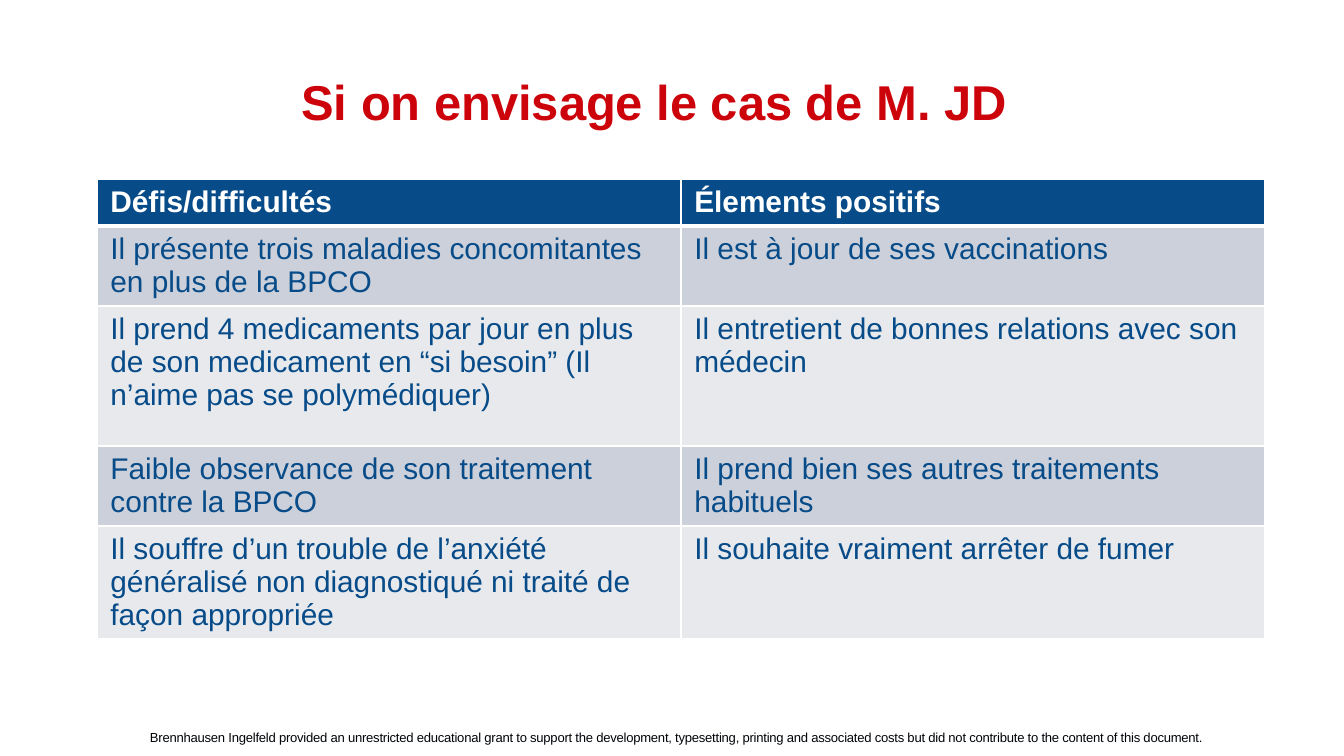
from lxml import etree
from pptx import Presentation
from pptx.dml.color import RGBColor
from pptx.enum.text import MSO_ANCHOR, MSO_AUTO_SIZE, PP_ALIGN
from pptx.oxml.ns import qn
from pptx.util import Emu, Pt

WHITE = RGBColor(0xFF, 0xFF, 0xFF)
RED = RGBColor(0xCC, 0x03, 0x0B)
BLUE = RGBColor(0x07, 0x4B, 0x88)
INK = RGBColor(0x00, 0x05, 0x0A)
BAND_DARK = RGBColor(0xCC, 0xD0, 0xDA)
BAND_LIGHT = RGBColor(0xE7, 0xE9, 0xED)

ROWS = [
    ("Défis/difficultés", "Élements positifs"),
    ("Il présente trois maladies concomitantes en plus de la BPCO",
     "Il est à jour de ses vaccinations"),
    ("Il prend 4 medicaments par jour en plus de son medicament en “si besoin” "
     "(Il n’aime pas se polymédiquer)",
     "Il entretient de bonnes relations avec son médecin"),
    ("Faible observance de son traitement contre la BPCO",
     "Il prend bien ses autres traitements habituels"),
    ("Il souffre d’un trouble de l’anxiété généralisé non diagnostiqué ni traité "
     "de façon appropriée",
     "Il souhaite vraiment arrêter de fumer"),
]
ROW_HEIGHTS = [47, 80, 140, 79, 113]
COLUMN_WIDTH = 584


def px(count):
    return Emu(round(count * 914400 / 134.4))


def add_borders(cell, **widths):
    """Draw white cell borders, with widths in points keyed by L, R, T and B."""
    properties = cell._tc.get_or_add_tcPr()
    for side, width in widths.items():
        line = etree.SubElement(properties, qn(f"a:ln{side}"), w=str(Pt(width)))
        fill = etree.SubElement(line, qn("a:solidFill"))
        etree.SubElement(fill, qn("a:srgbClr"), val=str(WHITE))


prs = Presentation()
prs.slide_width, prs.slide_height = px(1344), px(756)
slide = prs.slides.add_slide(prs.slide_layouts[5])

# Title
title = slide.shapes.title
title.left, title.top, title.width, title.height = px(288), px(59), px(1056), px(83)
title.text_frame.auto_size = MSO_AUTO_SIZE.NONE
title.text_frame.vertical_anchor = MSO_ANCHOR.MIDDLE
heading = title.text_frame.paragraphs[0]
heading.text = "Si on envisage le cas de M. JD"
heading.alignment = PP_ALIGN.LEFT
heading.font.name, heading.font.size, heading.font.bold = "Arial", Pt(26.2), True
heading.font.color.rgb = RED

# Challenges and strengths
table = slide.shapes.add_table(len(ROWS), 2, px(97), px(179),
                               px(2 * COLUMN_WIDTH), px(sum(ROW_HEIGHTS))).table
for column in table.columns:
    column.width = px(COLUMN_WIDTH)
for row, (texts, height) in enumerate(zip(ROWS, ROW_HEIGHTS)):
    table.rows[row].height = px(height)
    is_header = row == 0
    band = BLUE if is_header else BAND_DARK if row % 2 else BAND_LIGHT
    for col, text in enumerate(texts):
        cell = table.cell(row, col)
        add_borders(cell, L=1, R=1, T=3 if row == 1 else 1, B=3 if is_header else 1)
        cell.fill.solid()
        cell.fill.fore_color.rgb = band
        entry = cell.text_frame.paragraphs[0]
        entry.text = text
        entry.font.name, entry.font.size, entry.font.bold = "Arial", Pt(16), is_header
        entry.font.color.rgb = WHITE if is_header else BLUE

# Funding note
funding = slide.shapes.add_textbox(px(149), px(726), px(1097), px(19)).text_frame
funding.word_wrap = True
funding.margin_left, funding.margin_top = px(1), px(3)
funding.margin_right = funding.margin_bottom = 0
note = funding.paragraphs[0]
note.text = ("Brennhausen Ingelfeld provided an unrestricted educational grant to support "
             "the development, typesetting, printing and associated costs but did not "
             "contribute to the content of this document.")
note.font.name, note.font.size = "Arial", Pt(7)
note.font.color.rgb = INK
note.runs[0]._r.get_or_add_rPr().set("spc", "-10")

prs.save("out.pptx")
